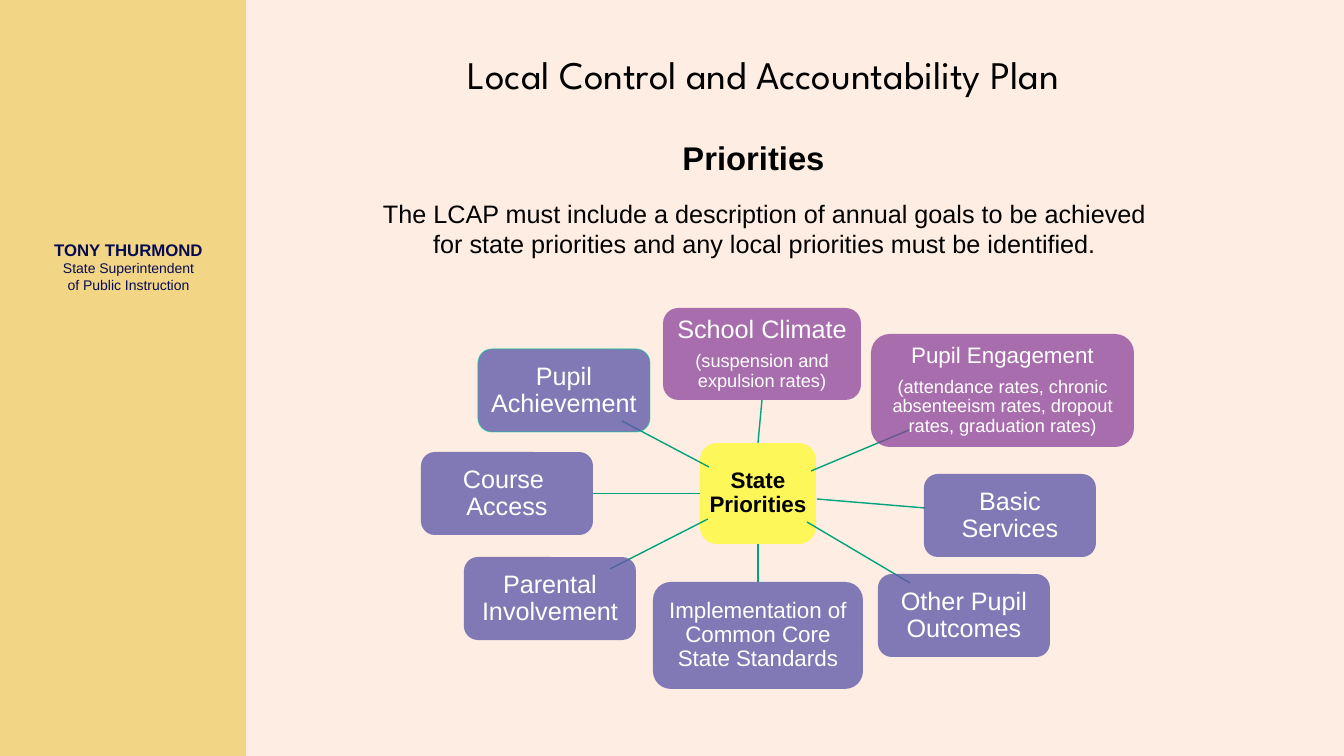
from pptx import Presentation
from pptx.dml.color import RGBColor
from pptx.enum.shapes import MSO_CONNECTOR, MSO_SHAPE
from pptx.enum.text import MSO_ANCHOR, PP_ALIGN
from pptx.oxml.ns import qn
from pptx.util import Emu, Pt
from lxml.etree import SubElement

PX = 914400 / 100.8
HUES = {
    "page": "FEEDE2", "band": "F3D685", "navy": "070C51", "black": "000000",
    "white": "FFFFFF", "hub": "FFFF00", "plum": "893E98", "blue": "605AAA",
    "green": "00A37B", "edge": "00CC99",
}

deck = Presentation()
deck.slide_width, deck.slide_height = Emu(round(1344 * PX)), Emu(round(756 * PX))
slide = deck.slides.add_slide(deck.slide_layouts[6])
shapes = slide.shapes


def write(frame, lines, hue="black", font="Arial", anchor=MSO_ANCHOR.MIDDLE,
          pad=None, space=1.0, after=0):
    """Fill a frame with centred lines of (text, size, bold)."""
    frame.word_wrap = True
    frame.vertical_anchor = anchor
    if pad is not None:
        frame.margin_left = frame.margin_right = Emu(round(pad * PX))
        frame.margin_top = frame.margin_bottom = Emu(round(pad * PX))
    for i, (text, size, bold) in enumerate(lines):
        para = frame.add_paragraph() if i else frame.paragraphs[0]
        para.text = text
        para.alignment = PP_ALIGN.CENTER
        para.line_spacing = space
        para.space_after = Pt(after)
        for run in para.runs:
            run.font.name, run.font.size, run.font.bold = font, Pt(size), bold
            run.font.color.rgb = RGBColor.from_string(HUES[hue])


def block(kind, box, hue, alpha=100):
    """Add a filled shape without a line."""
    shape = shapes.add_shape(kind, *[Emu(round(n * PX)) for n in box])
    shape.shadow.inherit = False
    shape.fill.solid()
    shape.fill.fore_color.rgb = RGBColor.from_string(HUES[hue])
    shape.line.fill.background()
    if alpha < 100:
        color = shape.fill._xPr.find(".//" + qn("a:srgbClr"))
        SubElement(color, qn("a:alpha")).set("val", str(alpha * 1000))
    return shape


# Background and side band
block(MSO_SHAPE.RECTANGLE, (0, 0, 1344, 756), "page")
block(MSO_SHAPE.RECTANGLE, (0, 0, 246, 756), "band")

# Side note, title, heading and intro
MID, TOP = MSO_ANCHOR.MIDDLE, MSO_ANCHOR.TOP
texts = [
    ((35, 228, 187, 77), "navy", "Arial", MID,
     [("TONY THURMOND", 12, True), ("State Superintendent", 10, False),
      ("of Public Instruction", 10, False)]),
    ((380, 19, 767, 109), "black", "League Spartan", MID,
     [("Local Control and Accountability Plan", 27.9, False)]),
    ((370, 193, 789, 72), "black", "Arial", TOP,
     [("The LCAP must include a description of annual goals to be achieved "
       "for state priorities and any local priorities must be identified.", 18, False)]),
    ((370, 119, 767, 76), "black", "Arial", MID, [("Priorities", 23.4, True)]),
]
for box, hue, font, anchor, lines in texts:
    frame = shapes.add_textbox(*[Emu(round(n * PX)) for n in box]).text_frame
    write(frame, lines, hue, font, anchor)

# Hub of the diagram
hub = block(MSO_SHAPE.ROUNDED_RECTANGLE, (700, 443, 116, 101), "hub", 60)
write(hub.text_frame, [("State Priorities", 16, True)], pad=1, space=0.9)

# Nodes: left, top, width, height, hue, spoke ends, joined sides, lines
W, H = 172, 83
nodes = [
    (663, 308, 198, 92, "plum", (758, 443, 762, 400), (0, 2),
     [("School Climate", 18, False), ("(suspension and expulsion rates)", 13, False)]),
    (871, 334, 263, 113, "plum", (811, 471, 909, 430), None,
     [("Pupil Engagement", 16, False),
      ("(attendance rates, chronic absenteeism rates, dropout rates, "
       "graduation rates)", 13, False)]),
    (924, 474, W, H, "blue", (817, 499, 925, 508), None,
     [("Basic Services", 18, False)]),
    (878, 574, W, H, "blue", (807, 522, 910, 583), None,
     [("Other Pupil Outcomes", 18, False)]),
    (653, 582, 210, 107, "blue", (758, 544, 758, 582), (2, 0),
     [("Implementation of Common Core State Standards", 16, False)]),
    (464, 557, W, H, "blue", (708, 519, 610, 569), None,
     [("Parental Involvement", 18, False)]),
    (421, 452, W, H, "blue", (700, 493, 593, 493), (1, 3),
     [("Course \vAccess", 18, False)]),
    (478, 349, W, H, "blue", (709, 467, 622, 421), None,
     [("Pupil Achievement", 18, False)]),
]
for left, top, wide, high, hue, ends, sides, lines in nodes:
    spoke = shapes.add_connector(MSO_CONNECTOR.STRAIGHT,
                                 *[Emu(round(n * PX)) for n in ends])
    spoke.line.color.rgb = RGBColor.from_string(HUES["green"])
    spoke.line.width = Pt(1)
    SubElement(spoke._element.spPr, qn("a:effectLst"))
    node = block(MSO_SHAPE.ROUNDED_RECTANGLE, (left, top, wide, high), hue,
                 73 if hue == "plum" else 79)
    write(node.text_frame, lines, "white", pad=1, space=0.9, after=6)
    if sides:
        spoke.begin_connect(hub, sides[0])
        spoke.end_connect(node, sides[1])

# Thin edge on the last node, Pupil Achievement
node.line.color.rgb = RGBColor.from_string(HUES["edge"])
node.line.width = Pt(0.75)
tint = node.line._ln.find(".//" + qn("a:srgbClr"))
SubElement(tint, qn("a:alpha")).set("val", "54000")

deck.save("out.pptx")
